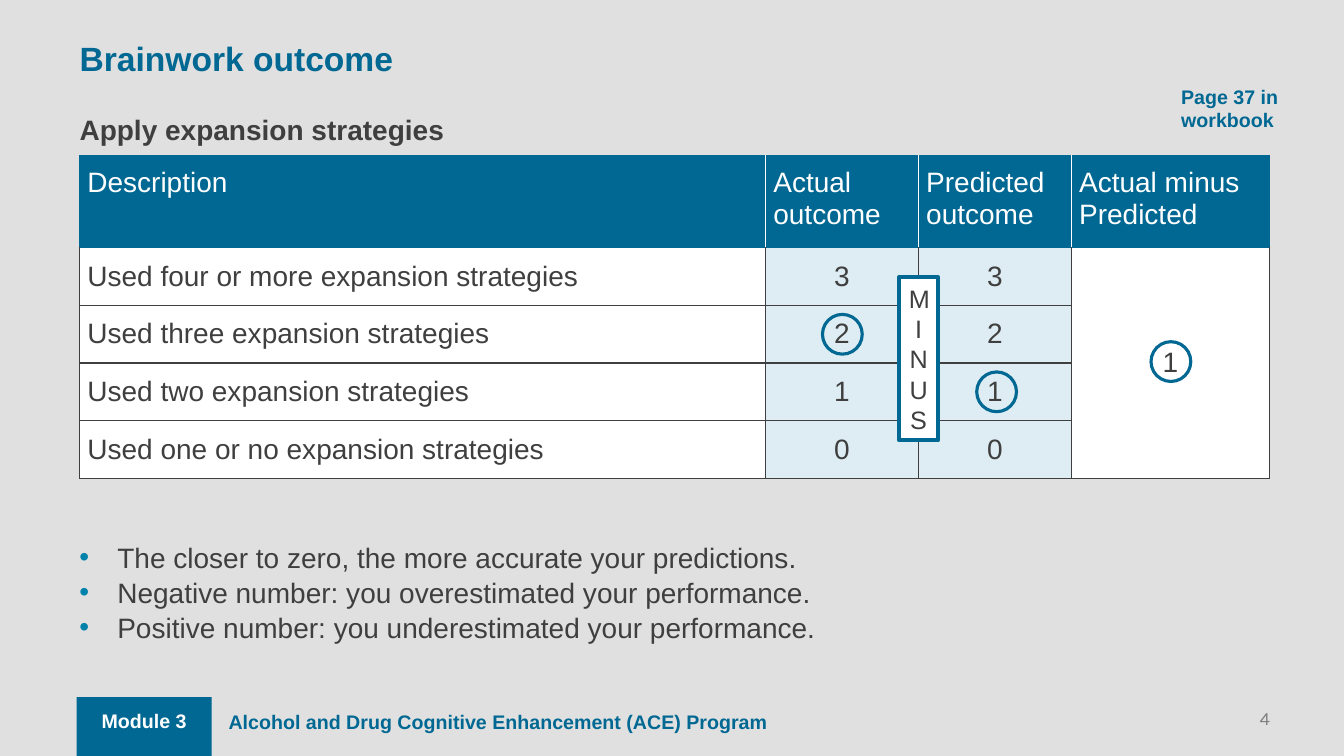
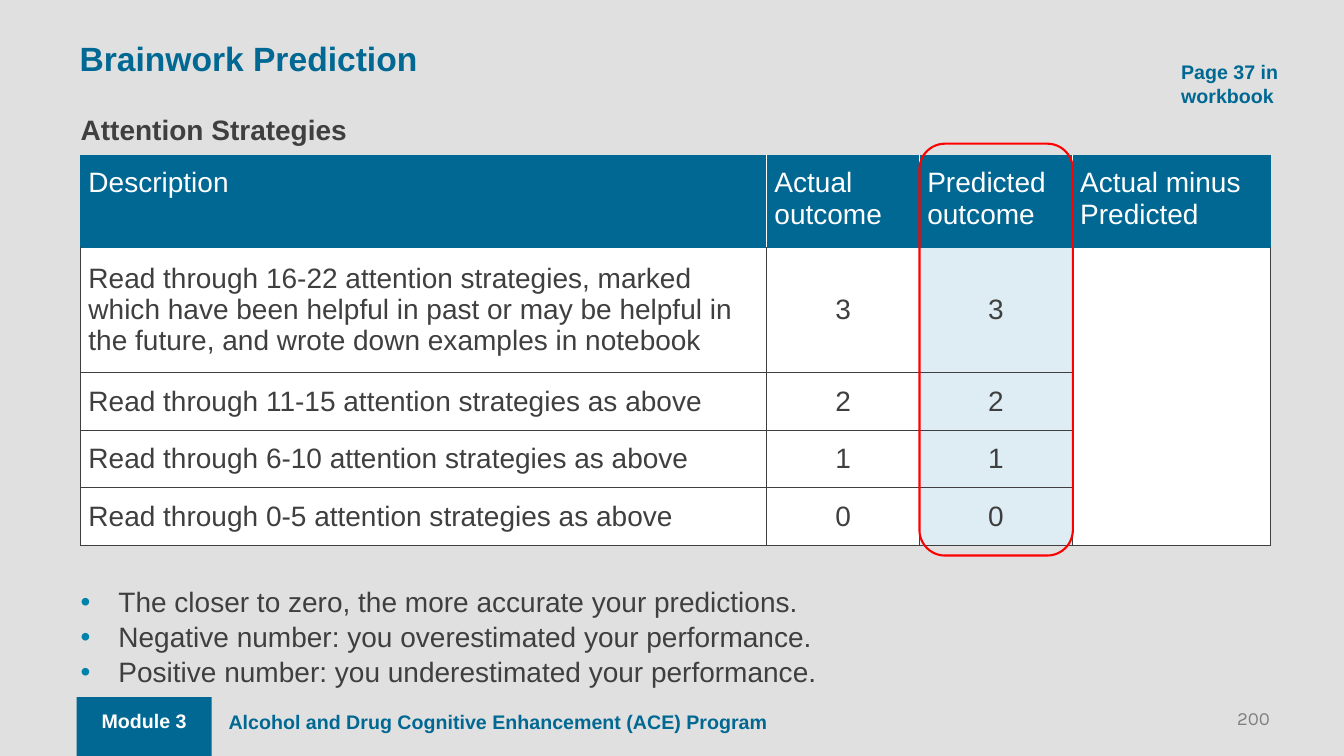
from lxml.etree import SubElement
from pptx import Presentation
from pptx.dml.color import RGBColor
from pptx.enum.shapes import MSO_SHAPE
from pptx.enum.text import MSO_ANCHOR, MSO_AUTO_SIZE, PP_ALIGN
from pptx.oxml.ns import qn
from pptx.util import Pt

HUE = {"blue": "006892", "ink": "3F3F3F", "white": "FFFFFF", "tint": "DEEDF3",
       "page": "E0E0E0", "grey": "808080", "dot": "0082AA", "red": "FF0000"}
PROGRAM = "Alcohol and Drug Cognitive Enhancement (ACE) Program"
MODULE = "Module 3"
NOTE = "Page 37 in workbook"
HEADS = ["Description", "Actual outcome", "Predicted outcome",
         "Actual minus Predicted"]
SCORES = [3, 2, 1, 0]
POINTS = ["The closer to zero, the more accurate your predictions.",
          "Negative number: you overestimated your performance.",
          "Positive number: you underestimated your performance."]
COLS = [490, 109.2, 109.2, 141.8]
HEAD_H, ROW_H, TOP = 65.8, 41.1, 111

SLIDES = [
    {"title": "Brainwork outcome", "sub": "Apply expansion strategies",
     "left": 56.8, "note": 56.9, "points": 386, "number": "4",
     "rows": ["Used four or more expansion strategies",
              "Used three expansion strategies",
              "Used two expansion strategies",
              "Used one or no expansion strategies"],
     "first": ROW_H, "tinted": (1, 2), "result": "1",
     "rings": [(697.7, 265.7), (587.5, 224.6), (822.2, 244.1)],
     "minus": (642.2, 198, 28, 116.6)},
    {"title": "Brainwork Prediction", "sub": "Attention Strategies",
     "left": 57.6, "note": 39.6, "points": 417.6, "number": "200",
     "rows": ["Read through 16-22 attention strategies, marked which have been "
              "helpful in past or may be helpful in the future, and wrote down "
              "examples in notebook",
              "Read through 11-15 attention strategies as above",
              "Read through 6-10 attention strategies as above",
              "Read through 0-5 attention strategies as above"],
     "first": 88.6, "tinted": (2,), "result": "",
     "frame": (656.8, 102.6, 109.6, 294.2)},
]


def rgb(name):
    return RGBColor.from_string(HUE[name])


def write(frame, lines, size, color, bold=False, align=PP_ALIGN.LEFT,
          before=0, face="Arial"):
    for i, line in enumerate(lines):
        par = frame.add_paragraph() if i else frame.paragraphs[0]
        par.text = line
        par.alignment = align
        par.space_before = Pt(before)
        font = par.font
        font.name, font.size, font.bold = face, Pt(size), bold
        font.color.rgb = rgb(color)


def pad(item, left, top, right, bottom):
    item.margin_left, item.margin_top = Pt(left), Pt(top)
    item.margin_right, item.margin_bottom = Pt(right), Pt(bottom)


def add_text(slide, box, lines, size, color, inset=(7.2, 3.6, 7.2, 3.6), **style):
    frame = slide.shapes.add_textbox(*map(Pt, box)).text_frame
    frame.word_wrap = True
    pad(frame, *inset)
    write(frame, lines, size, color, **style)
    return frame


def add_box(slide, kind, box, fill=None, line=None, width=1):
    shape = slide.shapes.add_shape(kind, *map(Pt, box))
    shape.shadow.inherit = False
    if fill:
        shape.fill.solid()
        shape.fill.fore_color.rgb = rgb(fill)
    else:
        shape.fill.background()
    if line:
        shape.line.color.rgb = rgb(line)
        shape.line.width = Pt(width)
    else:
        shape.line.fill.background()
    return shape


def add_bullet(par):
    props = par._p.get_or_add_pPr()
    props.set("marL", str(Pt(27)))
    props.set("indent", str(-Pt(27)))
    tone = SubElement(props, qn("a:buClr"))
    SubElement(tone, qn("a:srgbClr"), val=HUE["dot"])
    SubElement(props, qn("a:buFont"), typeface="Arial")
    SubElement(props, qn("a:buChar"), char="•")


def add_edges(cell, row, col):
    """Draw the four cell borders; header cells are split by white lines."""
    last = len(COLS) - 1
    if row == 0:
        tones = {"L": "white" if col else "blue",
                 "R": "white" if col < last else "blue",
                 "T": "blue", "B": "blue"}
    else:
        tones = dict.fromkeys("LRTB", "ink")
        if row == 1:
            tones["T"] = "blue"
    props = cell._tc.get_or_add_tcPr()
    for side, tone in tones.items():
        edge = SubElement(props, qn("a:ln" + side), w=str(Pt(1)))
        solid = SubElement(edge, qn("a:solidFill"))
        SubElement(solid, qn("a:srgbClr"), val=HUE[tone])


def add_grid(slide, data):
    rows = [HEADS] + [[text, str(score), str(score), ""]
                      for text, score in zip(data["rows"], SCORES)]
    rows[1][3] = data["result"]
    highs = [HEAD_H, data["first"]] + [ROW_H] * (len(rows) - 2)
    table = slide.shapes.add_table(
        len(rows), len(COLS), Pt(data["left"]), Pt(TOP),
        Pt(sum(COLS)), Pt(sum(highs))).table
    table.first_row = table.horz_banding = False
    for col, width in enumerate(COLS):
        table.columns[col].width = Pt(width)
    for r, row in enumerate(rows):
        table.rows[r].height = Pt(highs[r])
        for c, text in enumerate(row):
            cell = table.cell(r, c)
            add_edges(cell, r, c)
            fill = "blue" if r == 0 else "tint" if c in data["tinted"] else "white"
            cell.fill.solid()
            cell.fill.fore_color.rgb = rgb(fill)
            pad(cell, 5.6, 8.6, 5.6, 8.6)
            cell.vertical_anchor = MSO_ANCHOR.MIDDLE if r else MSO_ANCHOR.TOP
            write(cell.text_frame, [text], 20, "ink" if r else "white",
                  align=PP_ALIGN.CENTER if r and c else PP_ALIGN.LEFT)
    table.cell(1, 3).merge(table.cell(len(rows) - 1, 3))


def add_title(slide, text):
    title = slide.shapes.title
    title.left, title.top, title.width, title.height = map(
        Pt, (56.8, 24.5, 642, 33.8))
    frame = title.text_frame
    frame.auto_size = MSO_AUTO_SIZE.NONE
    frame.vertical_anchor = MSO_ANCHOR.MIDDLE
    pad(frame, 0, 0, 0, 0)
    write(frame, [text], 24, "blue", bold=True, before=8)


def add_footer(slide, number):
    add_box(slide, MSO_SHAPE.RECTANGLE, (54.8, 498, 96.5, 42), fill="blue")
    add_text(slide, (156.2, 503.3, 802, 33.8), [PROGRAM], 14, "blue",
             bold=True, before=8)
    add_text(slide, (54.8, 502.6, 96.5, 24.5), [MODULE], 14, "white",
             bold=True, before=8, align=PP_ALIGN.CENTER)
    add_text(slide, (763.2, 504.7, 144, 14.4), [number], 13.3, "grey",
             inset=(0, 0, 0, 0), align=PP_ALIGN.RIGHT, face="Karla")


def add_marks(slide, data):
    for x, y in data.get("rings", []):
        add_box(slide, MSO_SHAPE.OVAL, (x, y, 28.4, 28.4), line="blue", width=2.25)
    if "minus" in data:
        sign = add_box(slide, MSO_SHAPE.RECTANGLE, data["minus"],
                       fill="white", line="blue", width=2.75)
        sign.text_frame.word_wrap = True
        write(sign.text_frame, ["MINUS"], 18, "ink", align=PP_ALIGN.CENTER)
    if "frame" in data:
        add_box(slide, MSO_SHAPE.ROUNDED_RECTANGLE, data["frame"],
                line="red", width=1.5)


def build(deck, data):
    slide = deck.slides.add_slide(deck.slide_layouts[5])
    slide.background.fill.solid()
    slide.background.fill.fore_color.rgb = rgb("page")
    add_footer(slide, data["number"])
    add_title(slide, data["title"])
    add_grid(slide, data)
    left = data["left"]
    add_text(slide, (left, 77, 467, 31.7), [data["sub"]], 20, "ink",
             inset=(0, 3.6, 7.2, 3.6), bold=True)
    add_text(slide, (836.6, data["note"], 99.4, 41), [NOTE], 14, "blue", bold=True)
    frame = add_text(slide, (left, data["points"], 850, 72), POINTS, 20, "ink",
                     inset=(0, 0, 0, 0), before=1)
    for par in frame.paragraphs:
        add_bullet(par)
    add_marks(slide, data)


def main():
    deck = Presentation()
    deck.slide_width, deck.slide_height = Pt(960), Pt(540)
    for data in SLIDES:
        build(deck, data)
    deck.save("out.pptx")


if __name__ == "__main__":
    main()
